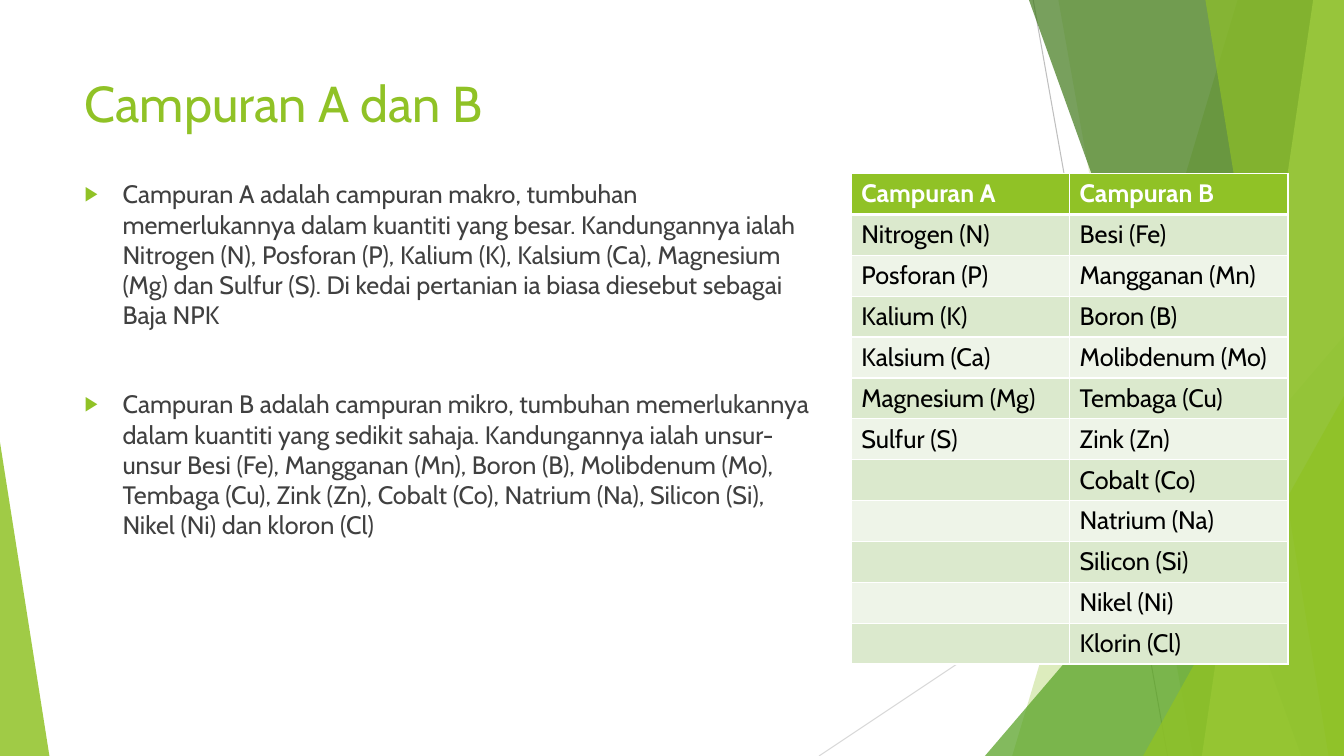
import dataclasses

import lxml.etree
import pptx
import pptx.dml.color
import pptx.enum.shapes
import pptx.enum.text
import pptx.oxml
import pptx.oxml.ns
import pptx.util

Pt = pptx.util.Pt
WIDTH, HEIGHT = 960, 540


@dataclasses.dataclass(frozen=True)
class Theme:
    font: str = "Cabin"
    title_size: int = 36
    text_size: int = 18
    green: str = "90C226"
    leaf: str = "54A021"
    forest: str = "3F7819"
    lime: str = "C0E474"
    text: str = "404040"
    black: str = "000000"
    white: str = "FFFFFF"
    bands: tuple = ("DBE9CD", "EEF4E8")
    rules: tuple = ("BFBFBF", "D9D9D9")


def rgb(value):
    return pptx.dml.color.RGBColor.from_string(value)


def apply(target, values):
    for name, value in values.items():
        setattr(target, name, value)


def child(parent, tag, **attributes):
    element = lxml.etree.SubElement(parent, pptx.oxml.ns.qn(tag))
    for name, value in attributes.items():
        element.set(name, str(value))
    return element


class SlideBuilder:
    def __init__(self, presentation, theme):
        self.theme = theme
        self.slide = presentation.slides.add_slide(presentation.slide_layouts[1])
        self.shapes = self.slide.shapes

    def style(self, paragraph, size, color, bold=False):
        apply(paragraph.font, {"name": self.theme.font, "size": Pt(size), "bold": bold})
        paragraph.font.color.rgb = rgb(color)

    def rule(self, start, end, color):
        line = self.shapes.add_connector(
            pptx.enum.shapes.MSO_CONNECTOR.STRAIGHT, *map(Pt, start + end))
        line.line.width = Pt(0.75)
        line.line.color.rgb = rgb(color)
        child(line.element.spPr, "a:effectLst")

    def tint(self, shape, color, opacity):
        shape.shadow.inherit = False
        shape.fill.solid()
        shape.fill.fore_color.rgb = rgb(color)
        shape.line.fill.background()
        color_node = shape.element.xpath("./p:spPr/a:solidFill/a:srgbClr")[0]
        child(color_node, "a:alpha", val=opacity * 1000)

    def facet(self, top_x, bottom_x, color, opacity):
        outline = self.shapes.build_freeform(Pt(top_x), Pt(0))
        corners = [(WIDTH, 0), (WIDTH, HEIGHT), (bottom_x, HEIGHT)]
        outline.add_line_segments([(Pt(x), Pt(y)) for x, y in corners], close=True)
        self.tint(outline.convert_to_shape(), color, opacity)

    def wedge(self, left, top, width, apex, color, opacity):
        triangle = self.shapes.add_shape(
            pptx.enum.shapes.MSO_SHAPE.ISOSCELES_TRIANGLE,
            *map(Pt, (left, top, width, HEIGHT - top)))
        triangle.adjustments[0] = apex
        self.tint(triangle, color, opacity)

    def place(self, holder, box):
        apply(holder, dict(zip(("left", "top", "width", "height"), map(Pt, box))))
        apply(holder.text_frame, {
            "word_wrap": True,
            "auto_size": pptx.enum.text.MSO_AUTO_SIZE.NONE,
            "vertical_anchor": pptx.enum.text.MSO_ANCHOR.TOP,
        })
        self.shapes.element.append(holder.element)

    def title(self, text, box):
        heading = self.shapes.title
        self.place(heading, box)
        heading.text_frame.text = text
        paragraph = heading.text_frame.paragraphs[0]
        paragraph.alignment = pptx.enum.text.PP_ALIGN.LEFT
        self.style(paragraph, self.theme.title_size, self.theme.green)

    def bullets(self, items, box):
        body = self.slide.placeholders[1]
        self.place(body, box)
        body.text_frame.text = "\n".join(text for text, gap in items)
        for paragraph, (text, gap) in zip(body.text_frame.paragraphs, items):
            paragraph.space_before = Pt(gap)
            self.style(paragraph, self.theme.text_size, self.theme.text)
        for node in body.element.xpath(".//a:p"):
            properties = node.get_or_add_pPr()
            properties.set("marL", str(Pt(27)))
            properties.set("indent", str(Pt(-27)))
            run_style = properties.find(pptx.oxml.ns.qn("a:defRPr"))
            marks = [child(properties, "a:buClr"),
                     child(properties, "a:buSzPct", val=80000),
                     child(properties, "a:buFont", typeface="Arial"),
                     child(properties, "a:buChar", char="▶")]
            child(marks[0], "a:srgbClr", val=self.theme.green)
            if run_style is not None:
                properties.append(run_style)

    def table(self, columns, left, top, column_width, row_height):
        theme = self.theme
        row_count = max(map(len, columns))
        frame = self.shapes.add_table(
            row_count, len(columns),
            *map(Pt, (left, top, column_width * len(columns), row_height * row_count)))
        grid = frame.table
        grid.horz_banding = False
        for row in grid.rows:
            row.height = Pt(row_height)
        for c, entries in enumerate(columns):
            grid.columns[c].width = Pt(column_width)
            for r in range(row_count):
                cell = grid.cell(r, c)
                header = r == 0
                cell.text = entries[r] if r < len(entries) else ""
                self.style(cell.text_frame.paragraphs[0], theme.text_size,
                           theme.white if header else theme.black, header)
                cell.fill.solid()
                cell.fill.fore_color.rgb = rgb(
                    theme.green if header else theme.bands[(r - 1) % 2])
        for r, row in enumerate(frame.element.xpath(".//a:tr")):
            widths = {"a:lnL": 1, "a:lnR": 1,
                      "a:lnT": 3 if r == 1 else 1, "a:lnB": 3 if r == 0 else 1}
            for properties in row.xpath("./a:tc/a:tcPr"):
                for position, (tag, width) in enumerate(widths.items()):
                    border = child(properties, tag, w=Pt(width))
                    child(child(border, "a:solidFill"), "a:srgbClr", val=theme.white)
                    properties.insert(position, border)


def main():
    theme = Theme()
    presentation = pptx.Presentation()
    apply(presentation, {"slide_width": Pt(WIDTH), "slide_height": Pt(HEIGHT)})
    builder = SlideBuilder(presentation, theme)

    builder.rule((738, 0), (834, HEIGHT), theme.rules[0])
    builder.rule((WIDTH, 290), (585, HEIGHT), theme.rules[1])
    builder.facet(884, 723, theme.green, 30)
    builder.facet(756, 852, theme.green, 20)
    builder.wedge(703.5, 240, 256.5, 1, theme.leaf, 72)
    builder.facet(735, 929.5, theme.forest, 70)
    builder.facet(938, 858.5, theme.lime, 70)
    builder.facet(861, 949, theme.green, 65)
    builder.wedge(816.5, 283, 143.5, 1, theme.green, 80)
    builder.wedge(0, 316, 35.3, 0, theme.green, 85)

    builder.title("Campuran A dan B", (53.3, 48, 677, 104))
    builder.bullets([
        ("Campuran A adalah campuran makro, tumbuhan memerlukannya dalam kuantiti "
         "yang besar. Kandungannya ialah Nitrogen (N), Posforan (P), Kalium (K), "
         "Kalsium (Ca), Magnesium (Mg) dan Sulfur (S). Di kedai pertanian ia biasa "
         "diesebut sebagai Baja NPK", 10),
        ("Campuran B adalah campuran mikro, tumbuhan memerlukannya dalam kuantiti "
         "yang sedikit sahaja. Kandungannya ialah unsur-unsur Besi (Fe), Mangganan "
         "(Mn), Boron (B), Molibdenum (Mo), Tembaga (Cu), Zink (Zn), Cobalt (Co), "
         "Natrium (Na), Silicon (Si), Nikel (Ni) dan kloron (Cl)", 42),
    ], (53.3, 124, 537, 305))
    macro = ["Campuran A", "Nitrogen (N)", "Posforan (P)", "Kalium (K)",
             "Kalsium (Ca)", "Magnesium (Mg)", "Sulfur (S)"]
    micro = ["Campuran B", "Besi (Fe)", "Mangganan (Mn)", "Boron (B)",
             "Molibdenum (Mo)", "Tembaga (Cu)", "Zink (Zn)", "Cobalt (Co)",
             "Natrium (Na)", "Silicon (Si)", "Nikel (Ni)", "Klorin (Cl)"]
    builder.table([macro, micro], 608, 124, 156, 28.8)

    presentation.save("out.pptx")


if __name__ == "__main__":
    main()
